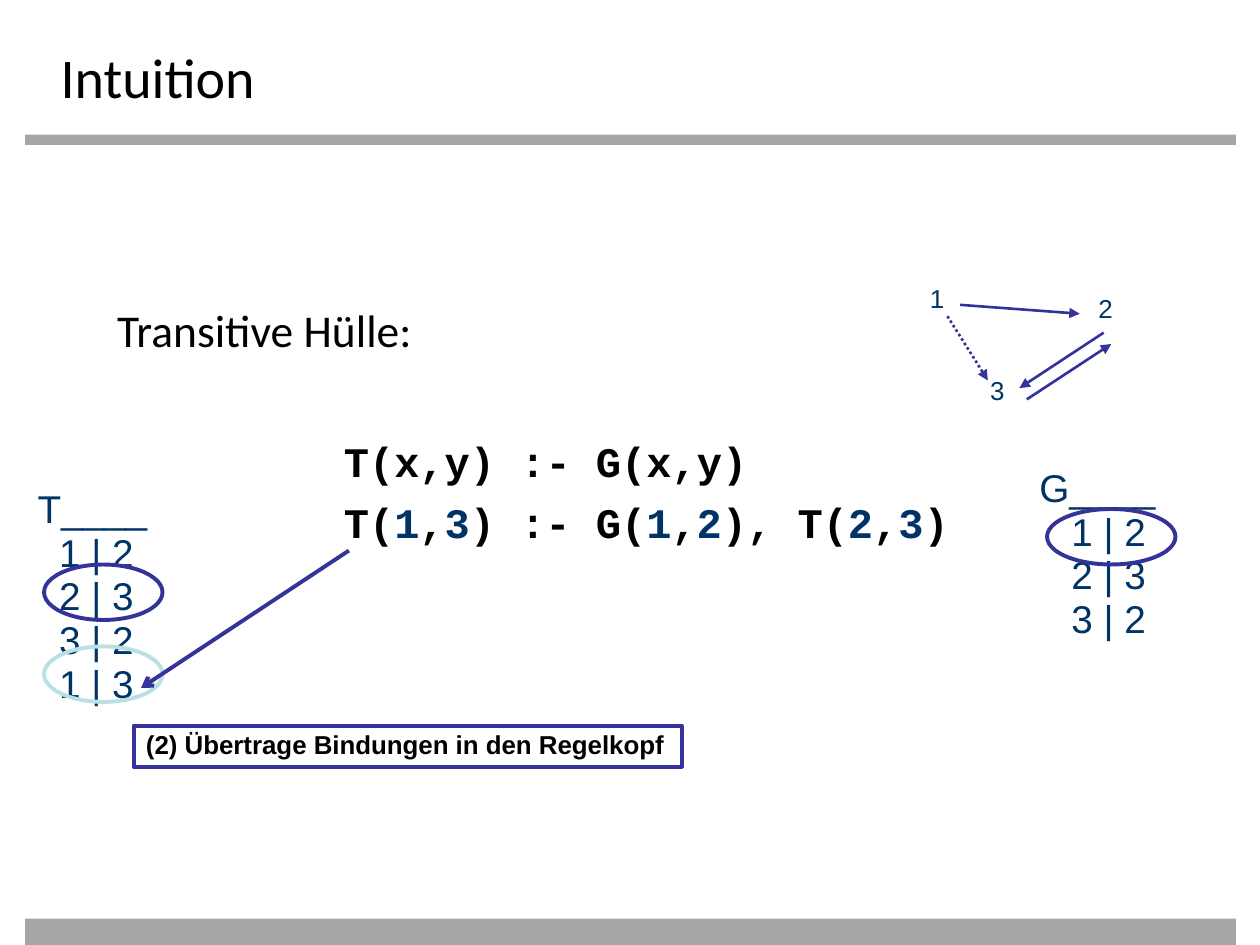
from dataclasses import dataclass
from itertools import groupby

from lxml.etree import SubElement as Sub
from pptx import Presentation
from pptx.dml.color import RGBColor as Rgb
from pptx.enum.dml import MSO_LINE as Dash
from pptx.enum.shapes import MSO_CONNECTOR as Conn, MSO_SHAPE as Kind
from pptx.enum.text import MSO_ANCHOR as Anchor, MSO_AUTO_SIZE as Fit, PP_ALIGN as Align
from pptx.oxml.ns import qn
from pptx.util import Pt


@dataclass(frozen=True)
class Theme:
    black: str = "000000"
    navy: str = "003366"
    blue: str = "333399"
    pale: str = "BBE0E3"
    grey: str = "A6A6A6"
    head: str = "Calibri"
    sans: str = "Arial"
    mono: str = "Courier New"
    title: float = 32
    body: float = 26
    code: float = 24
    data: float = 22.1
    note: float = 14.8
    thick: float = 2.25
    thin: float = 1.5


@dataclass(frozen=True)
class Box:
    x: float
    y: float
    w: float
    h: float


@dataclass(frozen=True)
class Table:
    box: Box
    name: str
    rows: tuple
    indent: float


@dataclass(frozen=True)
class Arrow:
    x1: float
    y1: float
    x2: float
    y2: float
    width: float = 1.5
    tip: str = "triangle"
    dots: bool = False


T = Theme()


def put(par, text, *, font=T.sans, size=T.note, color=T.black, bold=False,
        before=0, line=None, indent=0, digits=None):
    """Write text into a paragraph; digits gives numerals their own colour."""
    par.alignment = Align.LEFT
    par.space_before = Pt(before)
    if line:
        par.line_spacing = line
    props = par._p.get_or_add_pPr()
    props.set("marL", str(Pt(indent)))
    props.set("indent", "0")
    Sub(props, qn("a:buNone"))
    parts = groupby(text, str.isdigit) if digits else [(False, text)]
    for num, part in parts:
        run = par.add_run()
        run.text = "".join(part)
        run.font.name, run.font.size, run.font.bold = font, Pt(size), bold
        run.font.color.rgb = Rgb.from_string(digits if num else color)


def place(shape, box: Box) -> None:
    shape.left, shape.top = Pt(box.x), Pt(box.y)
    shape.width, shape.height = Pt(box.w), Pt(box.h)


def setup(frame, wrap: bool = True):
    frame.word_wrap = wrap
    frame.auto_size = Fit.NONE
    frame.vertical_anchor = Anchor.TOP
    return frame


def add_text(slide, box: Box, wrap: bool = True):
    area = slide.shapes.add_textbox(Pt(box.x), Pt(box.y), Pt(box.w), Pt(box.h))
    return setup(area.text_frame, wrap)


def add_form(slide, kind, box: Box, fill=None, line=None):
    form = slide.shapes.add_shape(kind, Pt(box.x), Pt(box.y), Pt(box.w), Pt(box.h))
    form.shadow.inherit = False
    if fill:
        form.fill.solid()
        form.fill.fore_color.rgb = Rgb.from_string(fill)
    else:
        form.fill.background()
    if line:
        form.line.color.rgb = Rgb.from_string(line)
        form.line.width = Pt(T.thick)
    else:
        form.line.fill.background()
    return form


def add_table(slide, table: Table) -> None:
    """Relation in plain text: a name line above indented rows."""
    frame = add_text(slide, table.box)
    put(frame.paragraphs[0], table.name + "____", size=T.data, color=T.navy, line=0.9)
    for row in table.rows:
        put(frame.add_paragraph(), row, size=T.data, color=T.navy,
            line=0.9, before=1.1, indent=table.indent)


def add_arrow(slide, arrow: Arrow) -> None:
    link = slide.shapes.add_connector(
        Conn.STRAIGHT, Pt(arrow.x1), Pt(arrow.y1), Pt(arrow.x2), Pt(arrow.y2))
    link.line.color.rgb = Rgb.from_string(T.blue)
    link.line.width = Pt(arrow.width)
    if arrow.dots:
        link.line.dash_style = Dash.ROUND_DOT
    Sub(link.line._get_or_add_ln(), qn("a:tailEnd"), type=arrow.tip)
    Sub(link._element.spPr, qn("a:effectLst"))


def main() -> None:
    deck = Presentation()
    deck.slide_width, deck.slide_height = Pt(720), Pt(540)
    slide = deck.slides.add_slide(deck.slide_layouts[5])

    # Title and grey bars
    title = slide.shapes.title
    place(title, Box(27.4, 20.9, 664.6, 37.4))
    put(setup(title.text_frame).paragraphs[0], "Intuition", font=T.head, size=T.title)
    for y, h in ((77, 5.8), (524.9, 15.1)):
        add_form(slide, Kind.RECTANGLE, Box(14.4, y, 691.9, h), fill=T.grey)

    # Rules
    body = add_text(slide, Box(59.8, 169.2, 612.7, 298.8))
    put(body.paragraphs[0], "Transitive Hülle:", font=T.head, size=T.body)
    rules = (("T(x,y) :- G(x,y)", 45), ("T(1,3) :- G(1,2), T(2,3)", 6.2))
    for rule, gap in rules:
        put(body.add_paragraph(), rule, font=T.mono, size=T.code, bold=True,
            before=gap, indent=129.6, digits=T.navy)

    # Relations
    add_table(slide, Table(Box(586.8, 264.5, 92.2, 102), "G",
                           ("1 | 2", "2 | 3", "3 | 2"), 18.4))
    add_table(slide, Table(Box(14.4, 276.5, 92.2, 126), "T",
                           ("1 | 2", "2 | 3", "3 | 2", "1 | 3"), 12.3))

    # Marked rows
    marks = ((598.3, 290.9, 73.4, T.blue), (25.2, 322.6, 67.7, T.blue),
             (25.2, 369.4, 67.7, T.pale))
    for x, y, w, color in marks:
        add_form(slide, Kind.OVAL, Box(x, y, w, 31.7), line=color)

    # Step note
    note = add_form(slide, Kind.RECTANGLE, Box(76.3, 414.7, 313.2, 23.4), line=T.blue)
    put(setup(note.text_frame, False).paragraphs[0],
        "(2) Übertrage Bindungen in den Regelkopf", bold=True, line=0.9)

    # Graph nodes
    for name, x, y in (("1", 524.2, 159.8), ("2", 620.6, 165.6), ("3", 558.7, 212.4)):
        frame = add_text(slide, Box(x, y, 23, 23.8), False)
        put(frame.paragraphs[0], name, color=T.navy, line=0.9)

    # Binding arrow and graph edges
    arrows = (
        Arrow(199.4, 314.6, 80.6, 393.1, T.thick, "arrow"),
        Arrow(548.6, 174.2, 617, 179.3),
        Arrow(630.7, 190.1, 582.5, 221.8),
        Arrow(586.8, 228.2, 635, 196.6),
        Arrow(541.4, 180.7, 564.5, 217.4, dots=True),
    )
    for arrow in arrows:
        add_arrow(slide, arrow)

    deck.save("out.pptx")


if __name__ == "__main__":
    main()
